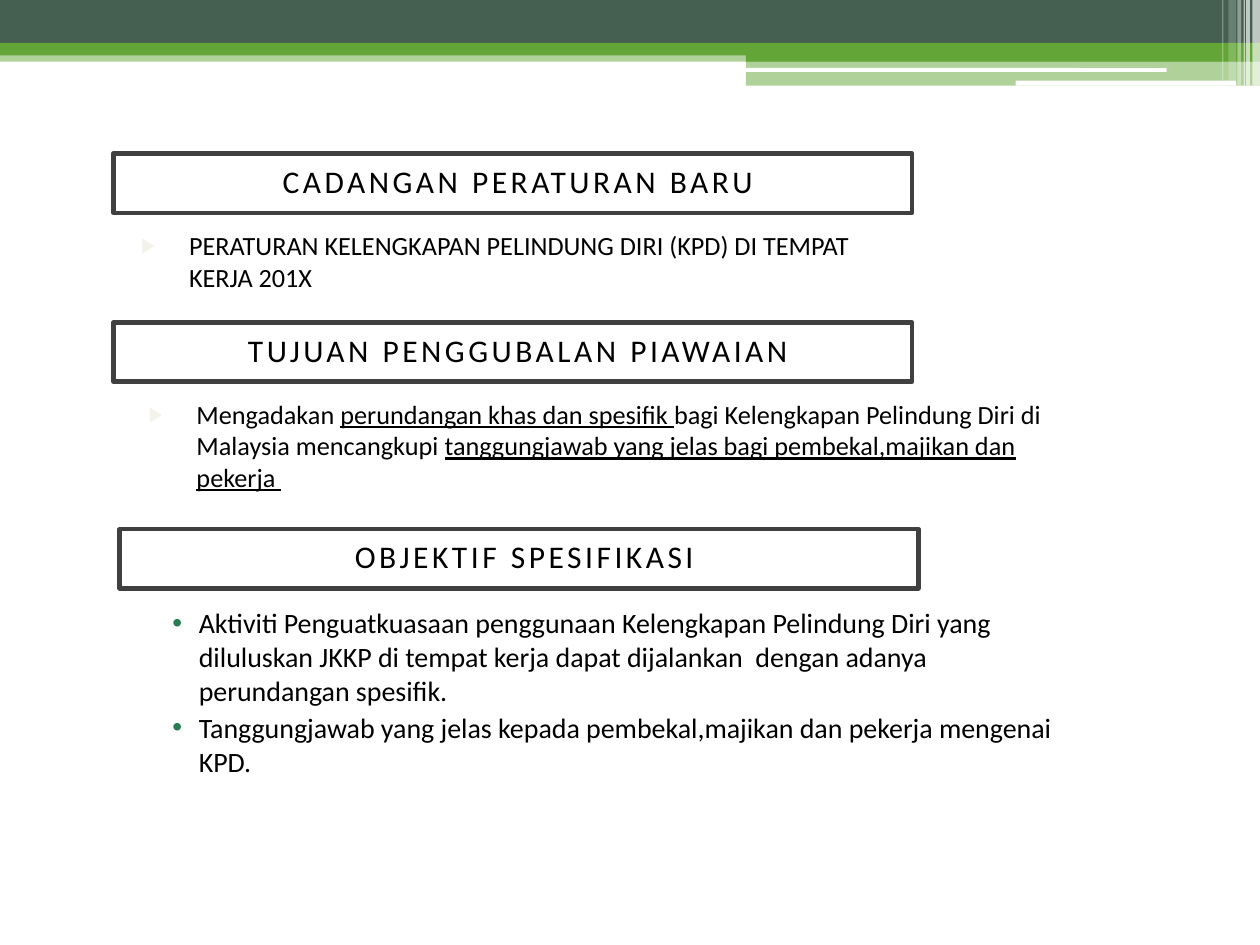
from lxml.etree import SubElement
from pptx import Presentation
from pptx.dml.color import RGBColor
from pptx.enum.shapes import MSO_SHAPE as Shape
from pptx.enum.text import MSO_ANCHOR as Anchor, PP_ALIGN as Align
from pptx.oxml.ns import qn
from pptx.util import Inches, Pt

BLACK = RGBColor(0x00, 0x00, 0x00)
WHITE = RGBColor(0xFF, 0xFF, 0xFF)
DARK_GREEN = RGBColor(0x45, 0x5F, 0x51)
GREEN = RGBColor(0x63, 0xA5, 0x37)
BORDER = RGBColor(0x40, 0x40, 0x40)
DOT = RGBColor(0x29, 0x7D, 0x53)
PALE = RGBColor(0xF3, 0xF2, 0xEB)
FONT = "Calibri"

BANDS = [
    (0, 0.4, 10, 0.09, GREEN, 50),
    (0, 0, 10, 0.34, DARK_GREEN, 100),
    (0, 0.34, 10, 0.1, GREEN, 100),
    (5.92, 0.39, 4.08, 0.1, GREEN, 100),
    (5.92, 0.48, 4.08, 0.2, GREEN, 50),
]
WHITE_BARS = [(5.91, 0.54, 3.35, 0.03), (8.06, 0.64, 1.75, 0.04)]
STRIPES = [
    (9.94, 0.06, 0.68, 65),
    (9.89, 0.03, 0.68, 65),
    (9.87, 0.01, 0.68, 60),
    (9.82, 0.03, 0.68, 40),
    (9.75, 0.06, 0.64, 20),
    (9.7, 0.01, 0.64, 30),
]
HEADINGS = [
    (0.9, 1.22, " CADANGAN PERATURAN BARU"),
    (0.9, 2.56, " TUJUAN PENGGUBALAN PIAWAIAN"),
    (0.95, 4.2, " OBJEKTIF SPESIFIKASI"),
]
REGULATION = [[("PERATURAN KELENGKAPAN PELINDUNG DIRI (KPD) DI TEMPAT KERJA 201X", False)]]
PURPOSE = [[
    ("Mengadakan ", False),
    ("perundangan khas dan spesifik ", True),
    ("bagi Kelengkapan Pelindung Diri di Malaysia mencangkupi ", False),
    ("tanggungjawab yang jelas bagi pembekal,majikan dan pekerja ", True),
]]
OBJECTIVES = [
    [("Aktiviti Penguatkuasaan penggunaan Kelengkapan Pelindung Diri yang diluluskan "
      "JKKP di tempat kerja dapat dijalankan  dengan adanya perundangan spesifik.", False)],
    [("Tanggungjawab yang jelas kepada pembekal,majikan dan pekerja mengenai KPD.", False)],
]


def add_block(slide, box, color, opacity=100, kind=Shape.RECTANGLE):
    block = slide.shapes.add_shape(kind, *map(Inches, box))
    block.shadow.inherit = False
    block.fill.solid()
    block.fill.fore_color.rgb = color
    block.line.fill.background()
    if opacity < 100:
        tint = block.fill._xPr.find(qn("a:solidFill"))[0]
        SubElement(tint, qn("a:alpha"), val=str(opacity * 1000))
    return block


def set_margins(frame, horizontal, vertical):
    frame.margin_left = frame.margin_right = Inches(horizontal)
    frame.margin_top = frame.margin_bottom = Inches(vertical)
    frame.word_wrap = True


def style_run(run, size):
    run.font.name = FONT
    run.font.size = Pt(size)
    run.font.color.rgb = BLACK


def add_heading(slide, left, top, title):
    heading = add_block(slide, (left, top, 6.34, 0.47), WHITE)
    heading.line.color.rgb = BORDER
    heading.line.width = Pt(2.5)
    frame = heading.text_frame
    set_margins(frame, 0.15, 0.15)
    frame.vertical_anchor = Anchor.MIDDLE
    frame.text = title
    paragraph = frame.paragraphs[0]
    paragraph.alignment = Align.CENTER
    paragraph.line_spacing = 0.9
    run = paragraph.runs[0]
    style_run(run, 18)
    run.font._element.set("spc", "200")


def set_bullet(paragraph, mark, color, scale, indent, hanging):
    props = paragraph._p.get_or_add_pPr()
    props.set("marL", str(Inches(indent)))
    props.set("indent", str(-Inches(hanging)))
    SubElement(SubElement(props, qn("a:buClr")), qn("a:srgbClr"), val=str(color))
    SubElement(props, qn("a:buSzPct"), val=str(scale * 1000))
    SubElement(props, qn("a:buFont"), typeface="Arial")
    SubElement(props, qn("a:buChar"), char=mark)


def add_bullets(slide, box, items, size, space, margins, bullet):
    frame = slide.shapes.add_textbox(*map(Inches, box)).text_frame
    set_margins(frame, *margins)
    for index, item in enumerate(items):
        paragraph = frame.add_paragraph() if index else frame.paragraphs[0]
        paragraph.space_before = Pt(space)
        set_bullet(paragraph, *bullet)
        for words, underlined in item:
            run = paragraph.add_run()
            run.text = words
            style_run(run, size)
            run.font.underline = underlined


def add_banner(slide):
    for *box, color, opacity in BANDS:
        add_block(slide, box, color, opacity)
    for box in WHITE_BARS:
        add_block(slide, box, WHITE, kind=Shape.ROUNDED_RECTANGLE)
    for left, width, height, opacity in STRIPES:
        add_block(slide, (left, 0, width, height), WHITE, opacity)


def main():
    deck = Presentation()
    deck.slide_width, deck.slide_height = Inches(10), Inches(7.5)
    slide = deck.slides.add_slide(deck.slide_layouts[6])
    add_banner(slide)

    dot = ("•", DOT, 100, 0.3, 0.21)
    arrow = ("▶", PALE, 80, 0.38, 0.38)
    add_bullets(slide, (1.18, 4.76, 7.34, 3.44), OBJECTIVES, 16, 2.2, (0.1, 0.05), dot)
    add_bullets(slide, (1.11, 3.12, 7.34, 3.44), PURPOSE, 15, 10, (0.07, 0.04), arrow)
    add_bullets(slide, (1.05, 1.78, 5.78, 1.15), REGULATION, 15, 10, (0.07, 0.04), arrow)
    for heading in HEADINGS:
        add_heading(slide, *heading)
    deck.save("out.pptx")


if __name__ == "__main__":
    main()
